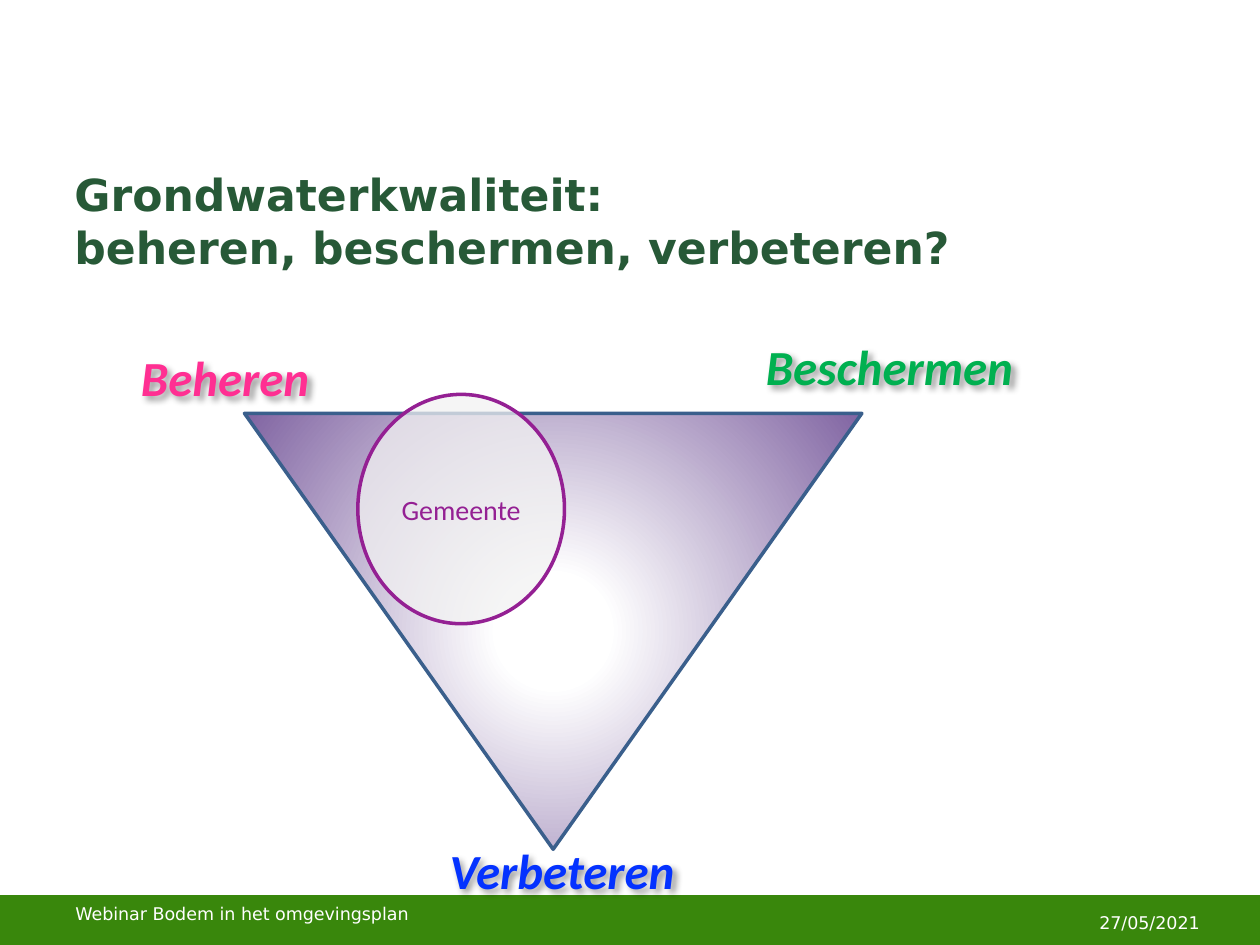
from lxml import etree
from pptx import Presentation
from pptx import util as u
from pptx.dml.color import RGBColor
from pptx.enum import shapes, text
from pptx.oxml import parse_xml
from pptx.oxml.ns import nsdecls, qn

COLORS = {
    "bar": "39870C", "title": "275937", "white": "FFFFFF", "purple": "8064A2",
    "edge": "3A5F8C", "improve": "0432FF", "protect": "00B050",
    "manage": "FF2F92", "circle": "F2F2F2", "ring": "942093",
}
SANS, BODY = "DejaVu Sans", "Calibri"
CELL = u.Inches(0.1)


def rgb(name):
    """Return the named colour."""
    return RGBColor.from_string(COLORS[name])


def cells(origin, x, y, w, h):
    """Turn grid cells counted from an origin into slide lengths."""
    return [round(n * CELL) for n in (origin[0] + x, origin[1] + y, w, h)]


def add_run(p, words, font, size, color, bold=False, italic=False):
    """Append one formatted run to a paragraph."""
    r = p.add_run()
    r.text = words
    r.font.name, r.font.size = font, u.Pt(size)
    r.font.bold, r.font.italic = bold, italic
    r.font.color.rgb = rgb(color)


def add_text(s, box, words, font, size, color, align=text.PP_ALIGN.LEFT,
             anchor=text.MSO_ANCHOR.TOP, wrap=True, **style):
    """Add a text box holding one run."""
    sp = s.shapes.add_textbox(*box)
    tf = sp.text_frame
    tf.word_wrap, tf.vertical_anchor = wrap, anchor
    p = tf.paragraphs[0]
    p.alignment = align
    add_run(p, words, font, size, color, **style)
    return sp


def add_outlined(s, kind, box, line):
    """Add a preset shape with a two-point outline and no shadow."""
    sp = s.shapes.add_shape(kind, *box)
    sp.shadow.inherit = False
    sp.line.color.rgb, sp.line.width = rgb(line), u.Pt(2)
    return sp


def fill_radial(sp):
    """Fill a shape with a white centre that fades to purple."""
    sp.fill.background()
    stops = "".join(
        f'<a:gs pos="{pos}"><a:srgbClr val="{COLORS[name]}"/></a:gs>'
        for pos, name in ((0, "white"), (15000, "white"), (100000, "purple")))
    grad = parse_xml(
        f'<a:gradFill {nsdecls("a")} rotWithShape="1"><a:gsLst>{stops}</a:gsLst>'
        '<a:path path="circle"><a:fillToRect l="50000" t="50000" r="50000" b="50000"/>'
        '</a:path></a:gradFill>')
    old = sp.element.spPr.find(qn("a:noFill"))
    old.getparent().replace(old, grad)


def add_shadow(sp):
    """Give a text box a soft shadow to the lower right."""
    sp.element.spPr.append(parse_xml(
        f'<a:effectLst {nsdecls("a")}><a:outerShdw blurRad="50800" dist="38100" '
        'dir="2700000" algn="tl" rotWithShape="0"><a:srgbClr val="000000">'
        '<a:alpha val="40000"/></a:srgbClr></a:outerShdw></a:effectLst>'))


def build_footer(s, origin):
    """Draw the green bar with the event name and date."""
    bar = add_outlined(s, shapes.MSO_SHAPE.RECTANGLE, cells(origin, 0, 0, 100, 3.9), "bar")
    bar.fill.solid()
    bar.fill.fore_color.rgb = rgb("bar")
    add_text(s, cells(origin, 72.9, 0, 23.3, 4), "27/05/2021", SANS, 10, "white",
             text.PP_ALIGN.RIGHT, text.MSO_ANCHOR.MIDDLE)
    add_text(s, cells(origin, 5, 0, 31.7, 4), "Webinar Bodem in het omgevingsplan",
             SANS, 10, "white")


def build_title(s, origin):
    """Fill the title placeholder with two lines."""
    sp = s.shapes.title
    sp.left, sp.top, sp.width, sp.height = cells(origin, 0, 0, 90, 7.3)
    tf = sp.text_frame
    tf.vertical_anchor, tf.auto_size = text.MSO_ANCHOR.TOP, text.MSO_AUTO_SIZE.NONE
    p = tf.paragraphs[0]
    p.alignment = text.PP_ALIGN.LEFT
    add_run(p, "Grondwaterkwaliteit:", SANS, 25.2, "title", bold=True)
    p.add_line_break()
    add_run(p, "beheren, beschermen, verbeteren?", SANS, 25.2, "title", bold=True)


def build_triangle(s, origin):
    """Draw the triangle, its corner labels and the municipality circle."""
    tri = add_outlined(s, shapes.MSO_SHAPE.ISOSCELES_TRIANGLE,
                       cells(origin, 0, 0, 49, 34.6), "edge")
    tri.rotation = 180
    fill_radial(tri)
    labels = (("Verbeteren", "improve", 15.3, 33.4, 20.1),
              ("Beschermen", "protect", 40.4, -6.6, 21.6),
              ("Beheren", "manage", -9.2, -5.7, 15.5))
    for words, color, x, y, w in labels:
        add_shadow(add_text(s, cells(origin, x, y, w, 5.7), words, BODY, 28, color,
                            wrap=False, bold=True, italic=True))
    circle = add_outlined(s, shapes.MSO_SHAPE.OVAL, cells(origin, 9, -1.5, 16.4, 18.2), "ring")
    circle.fill.solid()
    circle.fill.fore_color.rgb = rgb("circle")
    fill = circle.element.spPr.find(qn("a:solidFill"))
    etree.SubElement(fill[0], qn("a:alpha"), val="74000")
    tf = circle.text_frame
    tf.word_wrap, tf.vertical_anchor = True, text.MSO_ANCHOR.MIDDLE
    p = tf.paragraphs[0]
    p.alignment = text.PP_ALIGN.CENTER
    add_run(p, "Gemeente", BODY, 16, "ring")


def main():
    """Build and save the slide."""
    prs = Presentation()
    prs.slide_width, prs.slide_height = 100 * CELL, 75 * CELL
    s = prs.slides.add_slide(prs.slide_layouts[5])
    build_footer(s, (0, 71.2))
    build_title(s, (4.9, 12.8))
    build_triangle(s, (19.4, 32.8))
    prs.save("out.pptx")


if __name__ == "__main__":
    main()
